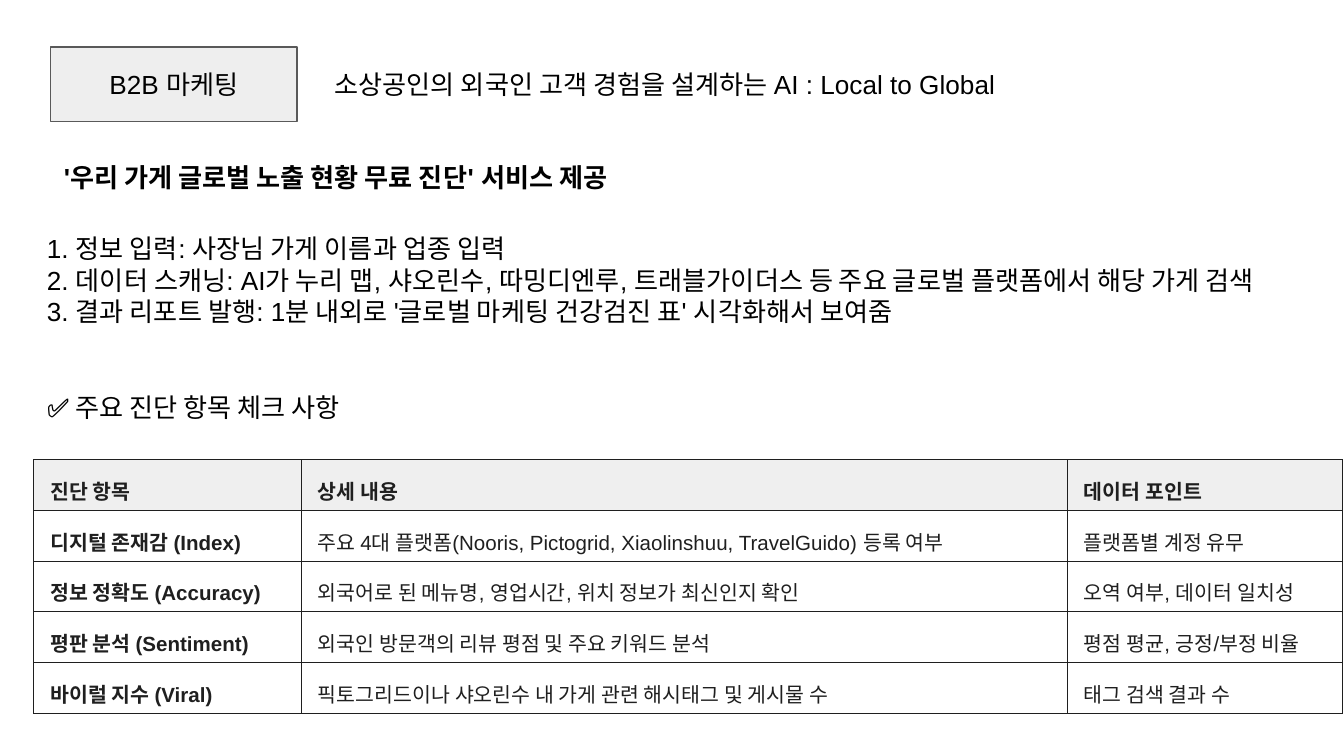
from lxml import etree
from pptx import Presentation
from pptx.dml.color import RGBColor
from pptx.enum.shapes import MSO_SHAPE
from pptx.enum.text import MSO_ANCHOR, MSO_AUTO_SIZE, PP_ALIGN
from pptx.oxml.ns import qn
from pptx.util import Pt

RECT = MSO_SHAPE.RECTANGLE
TOP, MIDDLE = MSO_ANCHOR.TOP, MSO_ANCHOR.MIDDLE
GROW, FIXED = MSO_AUTO_SIZE.SHAPE_TO_FIT_TEXT, MSO_AUTO_SIZE.NONE
LEFT, CENTER = PP_ALIGN.LEFT, PP_ALIGN.CENTER
BLACK, INK, WHITE = "000000", "1F1F1F", "FFFFFF"

BADGE = "B2B 마케팅"
HEADLINE = "소상공인의 외국인 고객 경험을 설계하는 AI : Local to Global"
SERVICE = "'우리 가게 글로벌 노출 현황 무료 진단' 서비스 제공"
STEPS = [
    "1. 정보 입력: 사장님 가게 이름과 업종 입력",
    "2. 데이터 스캐닝: AI가 누리 맵, 샤오린수, 따밍디엔루, 트래블가이더스 등 주요 글로벌 플랫폼에서 해당 가게 검색",
    "3. 결과 리포트 발행: 1분 내외로 '글로벌 마케팅 건강검진 표' 시각화해서 보여줌",
]
CHECK = "✅ 주요 진단 항목 체크 사항"
ROWS = [
    ("진단 항목", "상세 내용", "데이터 포인트"),
    ("디지털 존재감 (Index)",
     "주요 4대 플랫폼(Nooris, Pictogrid, Xiaolinshuu, TravelGuido) 등록 여부",
     "플랫폼별 계정 유무"),
    ("정보 정확도 (Accuracy)",
     "외국어로 된 메뉴명, 영업시간, 위치 정보가 최신인지 확인",
     "오역 여부, 데이터 일치성"),
    ("평판 분석 (Sentiment)",
     "외국인 방문객의 리뷰 평점 및 주요 키워드 분석",
     "평점 평균, 긍정/부정 비율"),
    ("바이럴 지수 (Viral)",
     "픽토그리드이나 샤오린수 내 가게 관련 해시태그 및 게시물 수",
     "태그 검색 결과 수"),
]
COLUMNS = [143.3, 410.4, 147.6]


def rgb(value):
    """Turn a hex string into a colour."""
    return RGBColor.from_string(value)


def set_attrs(target, values):
    """Set every attribute named in a dict of format values."""
    for name, value in values.items():
        setattr(target, name, value)


def write(tf, lines, size=14, color=BLACK, bold=False, **layout):
    """Write one formatted paragraph per line."""
    for i, line in enumerate(lines):
        p = tf.paragraphs[0] if i == 0 else tf.add_paragraph()
        set_attrs(p, layout)
        r = p.add_run()
        r.text = line
        set_attrs(r.font, {"name": "Arial", "size": Pt(size), "bold": bold})
        r.font.color.rgb = rgb(color)


def set_frame(tf, anchor, auto_size):
    """Give a text frame its margins, anchor and sizing."""
    margins = dict.fromkeys(
        ("margin_left", "margin_top", "margin_right", "margin_bottom"), Pt(7.2))
    set_attrs(tf, {"word_wrap": True, "vertical_anchor": anchor,
                   "auto_size": auto_size, **margins})


def add_text(s, box, lines, bold=False):
    """Add a left-aligned text box."""
    tf = s.shapes.add_textbox(*map(Pt, box)).text_frame
    set_frame(tf, TOP, GROW)
    write(tf, lines, bold=bold, alignment=LEFT)


def add_header(s, box):
    """Add the topic badge with the headline to its right."""
    x, y, w, h = box
    badge_w, gap = 132, 13
    sp = s.shapes.add_shape(RECT, Pt(x), Pt(y), Pt(badge_w), Pt(h))
    sp.shadow.inherit = False
    sp.fill.solid()
    sp.fill.fore_color.rgb = rgb("EEEEEE")
    sp.line.color.rgb = rgb("595959")
    sp.line.width = Pt(0.75)
    set_frame(sp.text_frame, MIDDLE, FIXED)
    write(sp.text_frame, [BADGE], alignment=CENTER)
    left = badge_w + gap
    add_text(s, (x + left, y + 4.4, w - left, 31.6), [HEADLINE])


def add_borders(cell):
    """Draw a thin line on all four sides of a cell."""
    props = cell._tc.get_or_add_tcPr()
    for i, side in enumerate(("lnL", "lnR", "lnT", "lnB")):
        ln = etree.Element(qn(f"a:{side}"), w=str(Pt(0.68)))
        fill = etree.SubElement(ln, qn("a:solidFill"))
        etree.SubElement(fill, qn("a:srgbClr"), val=INK)
        props.insert(i, ln)


def add_checklist(s, box):
    """Add the table of diagnosis items."""
    frame = s.shapes.add_table(len(ROWS), len(COLUMNS), *map(Pt, box))
    table = frame.table
    set_attrs(table, {"first_row": False, "horz_banding": False})
    for column, width in zip(table.columns, COLUMNS):
        column.width = Pt(width)
    for i, texts in enumerate(ROWS):
        table.rows[i].height = Pt(box[3] / len(ROWS))
        for j, text in enumerate(texts):
            cell = table.cell(i, j)
            set_attrs(cell, {"margin_left": Pt(9), "margin_right": Pt(9),
                             "margin_top": Pt(6), "margin_bottom": Pt(6)})
            cell.fill.solid()
            cell.fill.fore_color.rgb = rgb("EFEFEF" if i == 0 else WHITE)
            add_borders(cell)
            write(cell.text_frame, [text], 11, INK, i == 0 or j == 0,
                  line_spacing=1.15)


def main():
    """Build the slide and save it."""
    prs = Presentation()
    set_attrs(prs, {"slide_width": Pt(720), "slide_height": Pt(405)})
    s = prs.slides.add_slide(prs.slide_layouts[6])
    add_header(s, (27.2, 25.2, 523, 39.8))
    add_text(s, (27.2, 79.2, 592, 31.6), [SERVICE], bold=True)
    add_text(s, (18, 117.4, 736, 65.5), STEPS)
    add_text(s, (18, 202.3, 378, 31.6), [CHECK])
    add_checklist(s, (18, 246.3, sum(COLUMNS), 135.5))
    prs.save("out.pptx")


if __name__ == "__main__":
    main()
